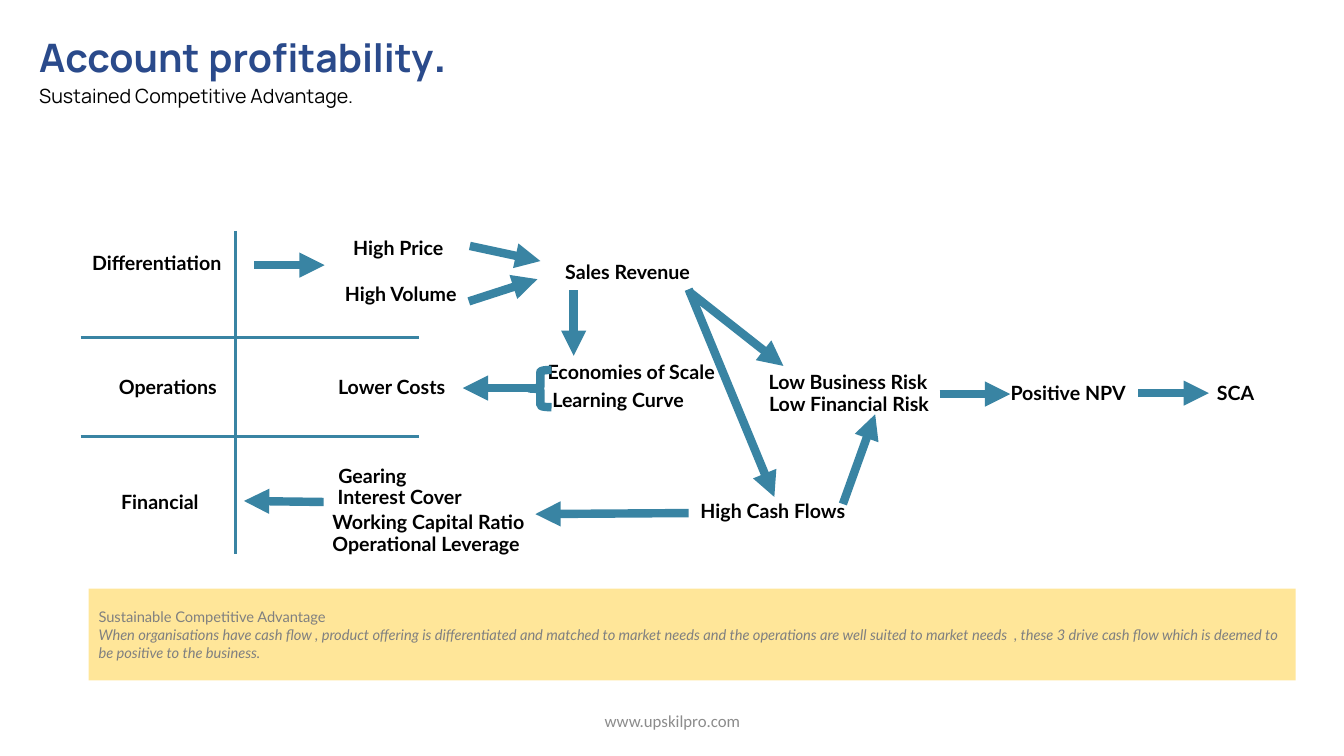
from dataclasses import dataclass

from lxml import etree
from pptx import Presentation
from pptx import util as u
from pptx.dml.color import RGBColor
from pptx.enum import shapes, text
from pptx.oxml import ns


@dataclass(frozen=True)
class Theme:
    teal: str = "3984A3"
    navy: str = "2A4A8B"
    black: str = "000000"
    sand: str = "FFE699"
    gray: str = "808080"
    pale: str = "8C8C8C"
    head: str = "Manrope"
    body: str = "Lato"
    foot: str = "Calibri"
    big: float = 28
    dot: float = 32
    label: float = 14
    small: float = 12
    note: float = 10.5
    thin: float = 2.25
    thick: float = 6


def write(para, words, font, size, color, bold=False, italic=False):
    """Add one run of text in the given format."""
    run = para.add_run()
    run.text = words
    face = run.font
    face.name, face.size = font, u.Pt(size)
    face.bold, face.italic = bold, italic
    face.color.rgb = RGBColor.from_string(color)


class Board:
    def __init__(self, slide, theme):
        self.slide, self.theme = slide, theme

    def box(self, x, y, w, h, mid=False):
        frame = self.slide.shapes.add_textbox(*map(u.Inches, (x, y, w, h))).text_frame
        frame.word_wrap = True
        if mid:
            frame.vertical_anchor = text.MSO_ANCHOR.MIDDLE
        return frame

    def label(self, words, x, y, w):
        para = self.box(x, y, w, 0.34).paragraphs[0]
        para.alignment = text.PP_ALIGN.CENTER
        t = self.theme
        write(para, words, font=t.body, size=t.label, color=t.black, bold=True)

    def shape(self, kind, x, y, w, h, fill=None, line=None):
        item = self.slide.shapes.add_shape(kind, *map(u.Inches, (x, y, w, h)))
        item.shadow.inherit = False
        if fill:
            item.fill.solid()
            item.fill.fore_color.rgb = RGBColor.from_string(fill)
        else:
            item.fill.background()
        if line:
            item.line.color.rgb = RGBColor.from_string(line)
            item.line.width = u.Pt(self.theme.thick)
        else:
            item.line.fill.background()
        return item

    def line(self, x1, y1, x2, y2, arrow=False):
        t = self.theme
        item = self.slide.shapes.add_connector(
            shapes.MSO_CONNECTOR.STRAIGHT, *map(u.Inches, (x1, y1, x2, y2)))
        item.line.color.rgb = RGBColor.from_string(t.teal)
        item.line.width = u.Pt(t.thick if arrow else t.thin)
        if arrow:
            stroke = item.line._get_or_add_ln()
            etree.SubElement(stroke, ns.qn("a:tailEnd"), type="triangle")
        etree.SubElement(item._element.spPr, ns.qn("a:effectLst"))


LABELS = [
    # Business areas
    ("Differentiation", 0.77, 2.44, 1.57),
    ("Operations", 0.99, 3.67, 1.35),
    ("Financial ", 1.07, 4.81, 1.08),
    # Revenue and costs
    ("High Price ", 3.19, 2.29, 1.57),
    ("High Volume", 3.19, 2.75, 1.57),
    ("Sales Revenue", 5.44, 2.53, 1.57),
    ("Lower Costs", 3.1, 3.67, 1.57),
    ("Economies of Scale ", 5.32, 3.52, 1.93),
    ("Learning Curve ", 5.19, 3.8, 1.93),
    # Risk and outcome
    ("Low Business Risk ", 7.47, 3.62, 1.93),
    ("Low Financial Risk ", 7.48, 3.84, 1.93),
    ("Positive NPV", 9.63, 3.73, 1.93),
    ("SCA", 11.29, 3.73, 1.93),
    # Finance
    ("Gearing", 2.91, 4.55, 1.57),
    ("Interest Cover", 3.18, 4.76, 1.57),
    ("Working Capital Ratio ", 3.18, 5.01, 2.14),
    ("Operational Leverage ", 3.18, 5.23, 2.14),
    ("High Cash Flows ", 6.62, 4.9, 2.14),
]

ARROWS = [
    (2.52, 2.63, 3.22, 2.63),    # Differentiation to price and volume
    (4.66, 2.44, 5.36, 2.59),    # Price to revenue
    (4.65, 2.99, 5.33, 2.77),    # Volume to revenue
    (6.83, 2.89, 7.77, 3.63),    # Revenue to risk
    (5.69, 2.88, 5.69, 3.53),    # Revenue to scale
    (5.34, 3.85, 4.59, 3.85),    # Scale to costs
    (3.21, 4.98, 2.42, 4.97),    # Ratios to Financial
    (6.83, 5.09, 5.31, 5.1),     # Cash to ratios
    (6.83, 2.87, 7.68, 4.93),    # Revenue to cash
    (8.36, 5, 8.68, 4.11),       # Cash to risk
    (9.32, 3.91, 10.02, 3.91),   # Risk to NPV
    (11.29, 3.9, 11.99, 3.9),    # NPV to SCA
]


def main():
    deck = Presentation()
    deck.slide_width, deck.slide_height = u.Inches(13.33), u.Inches(7.5)
    t = Theme()
    board = Board(deck.slides.add_slide(deck.slide_layouts[6]), t)

    # Note band
    band = board.shape(shapes.MSO_SHAPE.RECTANGLE, 0.88, 5.84, 11.97, 0.91, fill=t.sand)
    frame = band.text_frame
    frame.vertical_anchor = text.MSO_ANCHOR.MIDDLE
    notes = [
        ("Sustainable Competitive Advantage", False),
        ("When organisations have cash flow , product offering is differentiated and "
         "matched to market needs and the operations are well suited to market needs  "
         ", these 3 drive cash flow which is deemed to be positive to the business.", True),
    ]
    for i, (words, slant) in enumerate(notes):
        para = frame.add_paragraph() if i else frame.paragraphs[0]
        para.alignment = text.PP_ALIGN.LEFT
        write(para, words, font=t.body, size=t.note, color=t.gray, italic=slant)

    # Flow diagram
    for item in LABELS:
        board.label(*item)
    for ends in ARROWS:
        board.line(*ends, arrow=True)
    board.shape(shapes.MSO_SHAPE.LEFT_BRACE, 5.25, 3.67, 0.22, 0.37, line=t.teal)

    # Grid rules
    board.line(2.34, 2.29, 2.34, 5.5)
    for y in (3.35, 4.33):
        board.line(0.8, y, 4.16, y)

    # Footer
    para = board.box(4.42, 6.95, 4.5, 0.4, mid=True).paragraphs[0]
    para.alignment = text.PP_ALIGN.CENTER
    write(para, "www.upskilpro.com", font=t.foot, size=t.small, color=t.pale)

    # Title
    frame = board.box(0.29, 0.23, 7.01, 0.88)
    para = frame.paragraphs[0]
    for words, size in (("Account", t.big), (" ", t.dot), ("profitability", t.big), (".", t.dot)):
        write(para, words, font=t.head, size=size, color=t.navy, bold=True)
    para = frame.add_paragraph()
    para.line_spacing, para.space_after = 1.07, u.Pt(8)
    write(para, "Sustained Competitive Advantage.", font=t.head, size=t.label, color=t.black)

    deck.save("out.pptx")


if __name__ == "__main__":
    main()
